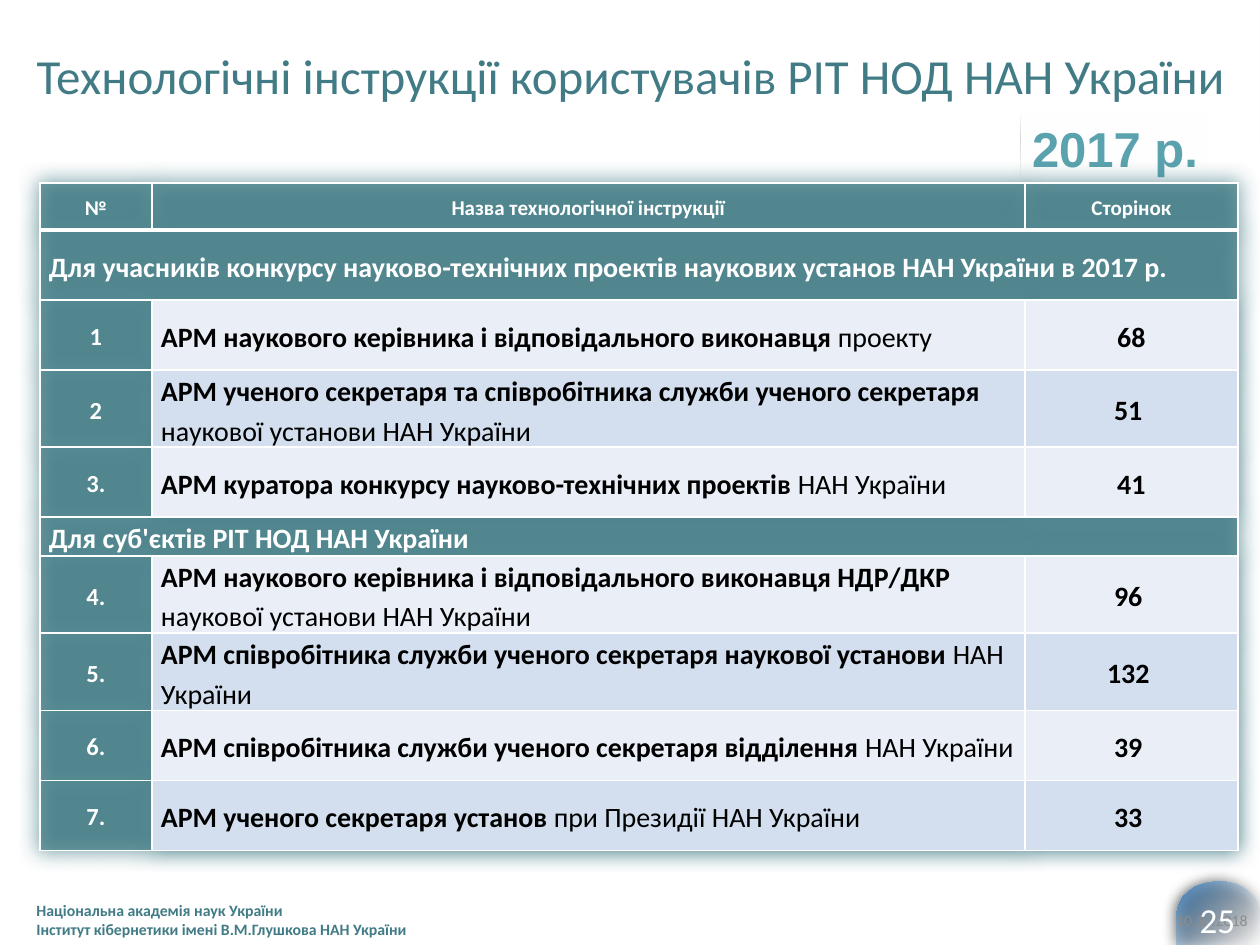
import pptx
import pptx.dml.color
import pptx.enum.shapes
import pptx.enum.text
import pptx.oxml
import pptx.oxml.ns
import pptx.util
from lxml import etree

PX = 914400 // 126
ALIGN = pptx.enum.text.PP_ALIGN
MIDDLE = pptx.enum.text.MSO_ANCHOR.MIDDLE
COLORS = {
    "teal": "417B85", "white": "FFFFFF", "black": "000000", "gray": "8C8C8C",
    "number": "FEFFFF", "light": "EAEFF7", "blue": "D3DFEE",
    "badge_start": "E5E9EE", "badge_end": "3477B2",
    "year_dark": "2B5259", "year_mid": "5AA2AE", "year_pale": "9CC7CE",
}
HEADINGS = ["№", "Назва технологічної інструкції", "Сторінок"]
# A one-item row is a section heading; others are number, bold part, plain part, pages.
ROWS = [
    ("Для учасників конкурсу науково-технічних проектів наукових установ НАН України в 2017 р.",),
    ("1", "АРМ наукового керівника і відповідального виконавця ", "проекту", "68"),
    ("2", "АРМ ученого секретаря та співробітника служби ученого секретаря ",
     "наукової установи НАН України", "51 "),
    ("3.", "АРМ куратора конкурсу науково-технічних проектів ", "НАН України", "41"),
    ("Для суб'єктів РІТ НОД НАН України",),
    ("4.", "АРМ наукового керівника і відповідального виконавця НДР/ДКР ",
     "наукової установи НАН України", "96 "),
    ("5.", "АРМ співробітника служби ученого секретаря наукової установи ",
     "НАН України", "132 "),
    ("6.", "АРМ співробітника служби ученого секретаря відділення ", "НАН України", "39 "),
    ("7.", "АРМ ученого секретаря установ ", "при Президії НАН України", "33 "),
]
COLUMN_WIDTHS = [112, 873, 213]
ROW_HEIGHTS = [47, 70, 70, 70, 70, 35, 70, 70, 70, 70]
BANDS = ["light", "blue", "light", None, "light", "blue", "light", "blue"]


def rgb(name):
    return pptx.dml.color.RGBColor.from_string(COLORS[name])


def add(parent, tag, **attributes):
    child = etree.SubElement(parent, pptx.oxml.ns.qn(tag))
    for key, value in attributes.items():
        child.set(key, str(value))
    return child


def set_gradient(fill, owner, stops, angle):
    """Stops are (percent, colour name, opacity percent)."""
    fill.gradient()
    gradient = owner.find(pptx.oxml.ns.qn("a:gradFill"))
    for child in list(gradient):
        gradient.remove(child)
    stop_list = add(gradient, "a:gsLst")
    for position, color, opacity in stops:
        stop = add(stop_list, "a:gs", pos=position * 1000)
        tint = add(stop, "a:srgbClr", val=COLORS[color])
        if opacity < 100:
            add(tint, "a:alpha", val=opacity * 1000)
    add(gradient, "a:lin", ang=angle * 60000, scaled=0)


def add_shadow(effects, color, opacity, blur, distance, angle):
    shadow = add(effects, "a:outerShdw", blurRad=int(blur * 12700),
                 dist=distance * 12700, dir=angle * 60000, algn="ctr", rotWithShape=0)
    add(add(shadow, "a:srgbClr", val=COLORS[color]), "a:alpha", val=opacity * 1000)


class SlideBuilder:
    font = "Calibri"

    def __init__(self, slide):
        self.slide = slide

    def place(self, box):
        return [value * PX for value in box]

    def style(self, run, size, color, bold=False):
        run.font.name = self.font
        run.font.size = pptx.util.Pt(size)
        run.font.bold = bold
        run.font.color.rgb = rgb(color)

    def title(self, text, box):
        title = self.slide.shapes.title
        title.left, title.top, title.width, title.height = self.place(box)
        set_gradient(title.fill, title._element.spPr, [
            (0, "white", 49), (15, "white", 100), (54, "white", 70), (100, "white", 0)], 0)
        title.text_frame.text = text
        title.text_frame.vertical_anchor = MIDDLE
        paragraph = title.text_frame.paragraphs[0]
        paragraph.alignment = ALIGN.LEFT
        self.style(paragraph.runs[0], 28, "teal")

    def badge(self, box):
        badge = self.slide.shapes.add_shape(
            pptx.enum.shapes.MSO_SHAPE.FLOWCHART_DELAY, *self.place(box))
        badge.rotation = 270
        badge._element.spPr.find(pptx.oxml.ns.qn("a:xfrm")).set("flipV", "1")
        set_gradient(badge.fill, badge._element.spPr,
                     [(0, "badge_start", 0), (100, "badge_end", 100)], 45)
        badge.line.fill.background()
        badge.shadow.inherit = False
        effects = badge._element.spPr.find(pptx.oxml.ns.qn("a:effectLst"))
        add_shadow(effects, "black", 100, 8.5, 1, 90)

    def text(self, text, box, size, color, align=ALIGN.LEFT, bold=False):
        label = self.slide.shapes.add_textbox(*self.place(box))
        frame = label.text_frame
        frame.word_wrap = True
        frame.vertical_anchor = MIDDLE
        frame.text = text
        for paragraph in frame.paragraphs:
            paragraph.alignment = align
            self.style(paragraph.runs[0], size, color, bold)
        return label

    def year(self, text, box):
        year = self.text(text, box, 28, "year_mid", ALIGN.CENTER, True)
        set_gradient(year.fill, year._element.spPr,
                     [(0, "white", 0), (63, "white", 100), (100, "white", 0)], 270)
        frame = year.text_frame
        frame.word_wrap = False
        frame.vertical_anchor = pptx.enum.text.MSO_ANCHOR.TOP
        frame.auto_size = pptx.enum.text.MSO_AUTO_SIZE.SHAPE_TO_FIT_TEXT
        frame.margin_left = frame.margin_right = 9 * PX
        frame.margin_top = frame.margin_bottom = 5 * PX
        font = frame.paragraphs[0].runs[0].font
        font.name = "Arial"
        set_gradient(font.fill, font._element, [
            (0, "year_dark", 100), (50, "year_mid", 100), (100, "year_pale", 100)], 90)

    def cell(self, cell, runs, align, fill=None, thick_side=None):
        """Runs are (text, size, colour, bold); no fill name means translucent teal."""
        cell.margin_left = cell.margin_right = 9 * PX
        cell.margin_top = cell.margin_bottom = 0
        cell.vertical_anchor = MIDDLE
        cell.fill.solid()
        cell.fill.fore_color.rgb = rgb(fill or "teal")
        properties = cell._tc.get_or_add_tcPr()
        if fill is None:
            tint = properties.find(".//" + pptx.oxml.ns.qn("a:srgbClr"))
            add(tint, "a:alpha", val=70000)
        for index, side in enumerate(["a:lnL", "a:lnR", "a:lnT", "a:lnB"]):
            border = add(properties, side, w=12700 * (3 if side == thick_side else 1))
            add(add(border, "a:solidFill"), "a:srgbClr", val=COLORS["white"])
            properties.insert(index, border)
        paragraph = cell.text_frame.paragraphs[0]
        paragraph.alignment = align
        paragraph.line_spacing = 1.15
        for text, *look in runs:
            run = paragraph.add_run()
            run.text = text
            self.style(run, *look)

    def instructions(self, box):
        table = self.slide.shapes.add_table(
            len(ROWS) + 1, len(HEADINGS), *self.place(box)).table
        table.first_row = table.horz_banding = False
        table_properties = table._tbl.tblPr
        effects = add(table_properties, "a:effectLst")
        table_properties.insert(0, effects)
        add_shadow(effects, "teal", 100, 12, 0, 0)
        for column, width in zip(table.columns, COLUMN_WIDTHS):
            column.width = width * PX
        for row, height in zip(table.rows, ROW_HEIGHTS):
            row.height = height * PX
        for column, heading in enumerate(HEADINGS):
            self.cell(table.cell(0, column), [(heading, 12, "white", True)],
                      ALIGN.CENTER, thick_side="a:lnB")
        for index, content in enumerate(ROWS, 1):
            cells = [table.cell(index, column) for column in range(len(HEADINGS))]
            if len(content) == 1:
                cells[0].merge(cells[-1])
                side = "a:lnT" if index == 1 else None
                self.cell(cells[0], [(content[0], 16, "white", True)], ALIGN.LEFT,
                          thick_side=side)
                continue
            number, name, detail, pages = content
            band = BANDS[index - 2]
            self.cell(cells[0], [(number, 14, "white", True)], ALIGN.CENTER)
            self.cell(cells[1], [(name, 16, "black", True), (detail, 16, "black", False)],
                      ALIGN.LEFT, band)
            self.cell(cells[2], [(pages, 16, "black", True)], ALIGN.CENTER, band)


def main():
    deck = pptx.Presentation()
    deck.slide_width, deck.slide_height = 1260 * PX, 945 * PX
    builder = SlideBuilder(deck.slides.add_slide(deck.slide_layouts[5]))
    builder.badge((1186, 871, 64, 83))
    builder.title("Технологічні інструкції користувачів РІТ НОД НАН України",
                  (24, 0, 1236, 149))
    builder.text("10.10.2018", (1154, 895, 106, 50), 9, "gray", ALIGN.RIGHT)
    builder.text("Національна академія наук України\n"
                 "Інститут кібернетики імені В.М.Глушкова НАН України",
                 (24, 895, 557, 50), 9, "teal", bold=True)
    builder.text("25", (1177, 895, 81, 50), 20, "number", ALIGN.CENTER)
    builder.year("2017 р.", (1021, 113, 188, 69))
    builder.instructions((40, 183, sum(COLUMN_WIDTHS), sum(ROW_HEIGHTS)))
    deck.save("out.pptx")


if __name__ == "__main__":
    main()
